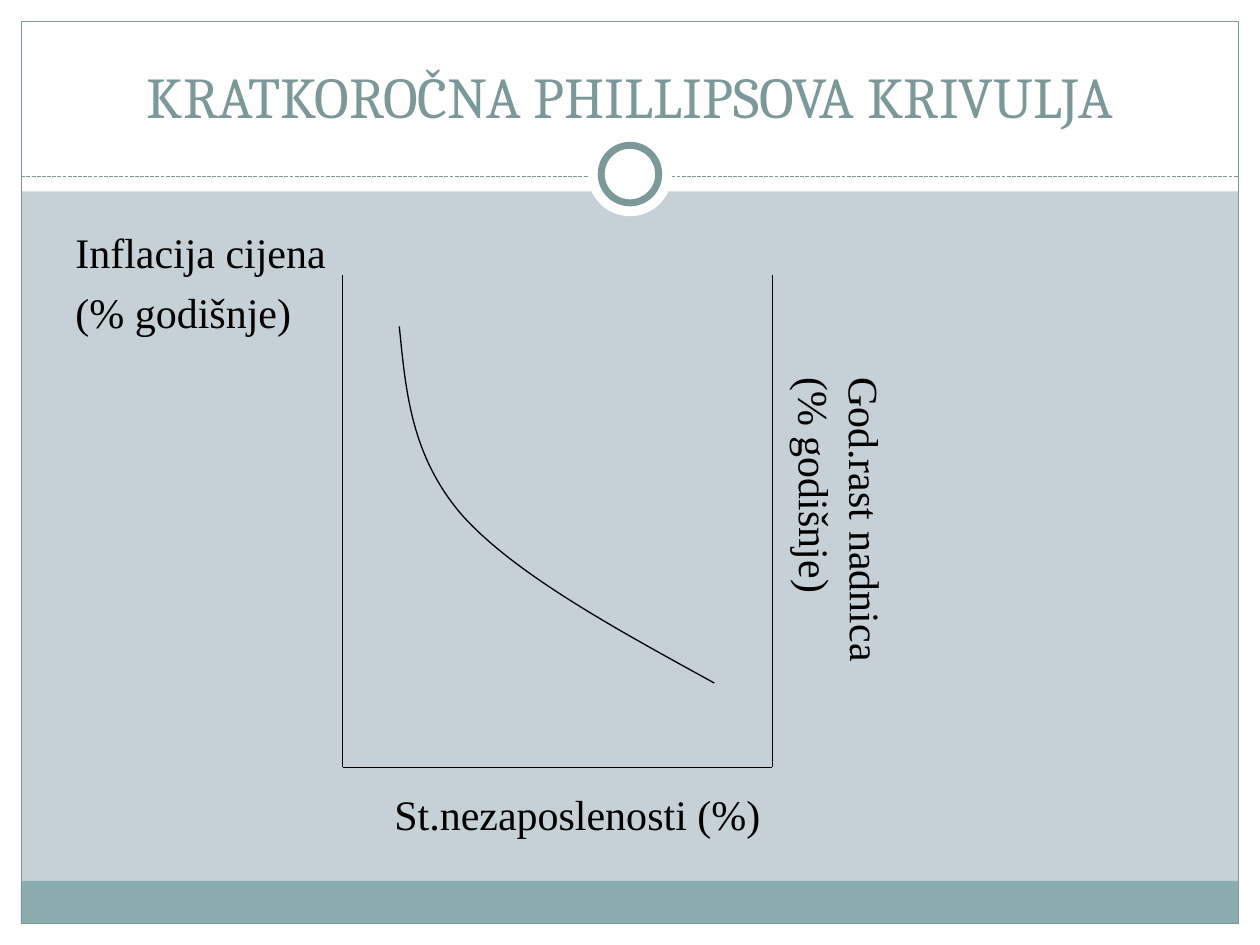
"""Build the slide on the short-run Phillips curve."""
import pptx
import pptx.dml.color
import pptx.enum.dml
import pptx.enum.shapes
import pptx.enum.text
import pptx.oxml
import pptx.oxml.ns
import pptx.util

Cm = pptx.util.Cm
Pt = pptx.util.Pt
RGBColor = pptx.dml.color.RGBColor
MSO_SHAPE = pptx.enum.shapes.MSO_SHAPE
PP_ALIGN = pptx.enum.text.PP_ALIGN
MSO_ANCHOR = pptx.enum.text.MSO_ANCHOR
MSO_AUTO_SIZE = pptx.enum.text.MSO_AUTO_SIZE

BLACK = RGBColor(0x00, 0x00, 0x00)
WHITE = RGBColor(0xFF, 0xFF, 0xFF)
GREY_BLUE = RGBColor(0xC5, 0xD1, 0xD7)
TEAL = RGBColor(0x7C, 0x99, 0x9A)
BAND = RGBColor(0x8C, 0xAD, 0xAE)

deck = pptx.Presentation()
deck.slide_width = Cm(25.4)
deck.slide_height = Cm(19.05)
page = deck.slides.add_slide(deck.slide_layouts[6])
page.background.fill.solid()
page.background.fill.fore_color.rgb = GREY_BLUE


def add_text(text, left, top, width, height, font="Times New Roman", size=24,
             color=BLACK, align=PP_ALIGN.LEFT, anchor=MSO_ANCHOR.TOP,
             before=0, rotation=0, wrap=False):
    box = page.shapes.add_textbox(Cm(left), Cm(top), Cm(width), Cm(height))
    box.rotation = rotation
    frame = box.text_frame
    frame.word_wrap = wrap
    frame.auto_size = MSO_AUTO_SIZE.NONE if wrap else MSO_AUTO_SIZE.SHAPE_TO_FIT_TEXT
    frame.vertical_anchor = anchor
    frame.text = text
    for para in frame.paragraphs:
        para.alignment = align
        para.space_before = Pt(before)
        for span in para.runs:
            span.font.name = font
            span.font.size = Pt(size)
            span.font.color.rgb = color


def add_line(x1, y1, x2, y2, color=BLACK):
    line = page.shapes.add_connector(
        pptx.enum.shapes.MSO_CONNECTOR.STRAIGHT, Cm(x1), Cm(y1), Cm(x2), Cm(y2))
    line.line.color.rgb = color
    line.line.width = Pt(0.75)
    line._element.spPr.append(pptx.oxml.parse_xml(
        f"<a:effectLst {pptx.oxml.ns.nsdecls('a')}/>"))
    return line


panels = [
    (MSO_SHAPE.RECTANGLE, 0, 18.62, 25.4, 0.43, WHITE, None, 0),
    (MSO_SHAPE.RECTANGLE, 0, 0, 25.4, 3.86, WHITE, None, 0),
    (MSO_SHAPE.RECTANGLE, 0, 0, 0.43, 19.05, WHITE, None, 0),
    (MSO_SHAPE.RECTANGLE, 24.97, 0, 0.43, 19.05, WHITE, None, 0),
    (MSO_SHAPE.RECTANGLE, 0.42, 17.76, 24.54, 0.86, BAND, None, 0),
    (MSO_SHAPE.RECTANGLE, 0.43, 0.43, 24.54, 18.19, None, TEAL, 0.75),
    (MSO_SHAPE.OVAL, 11.85, 2.66, 1.7, 1.7, WHITE, None, 0),
    (MSO_SHAPE.OVAL, 12.12, 2.93, 1.16, 1.16, WHITE, TEAL, 4),
]
for kind, left, top, width, height, fill, outline, weight in panels:
    if kind == MSO_SHAPE.OVAL and outline is None:
        divider = add_line(0.43, 3.56, 24.97, 3.56, TEAL)
        divider.line.dash_style = pptx.enum.dml.MSO_LINE.SQUARE_DOT
    panel = page.shapes.add_shape(kind, Cm(left), Cm(top), Cm(width), Cm(height))
    panel.shadow.inherit = False
    if fill is None:
        panel.fill.background()
    else:
        panel.fill.solid()
        panel.fill.fore_color.rgb = fill
    if outline is None:
        panel.line.fill.background()
    else:
        panel.line.color.rgb = outline
        panel.line.width = Pt(weight)

add_text("KRATKOROČNA PHILLIPSOVA KRIVULJA", 0.85, 0.64, 23.7, 2.1,
         font="Cambria", size=33, color=TEAL, align=PP_ALIGN.CENTER,
         anchor=MSO_ANCHOR.BOTTOM, wrap=True)
add_text("Inflacija cijena\n(% godišnje)", 1.27, 4.45, 5.61, 2.51, before=5.5)
add_text("St.nezaposlenosti (%)", 7.7, 15.77, 7.95, 1.27)
add_text("God.rast nadnica\n(% godišnje)", 13.79, 9.35, 6.3, 2.31, rotation=89.7)

axis_left, axis_right, axis_top, axis_bottom = 6.91, 15.57, 5.54, 15.47
for axis in (axis_left, axis_right):
    add_line(axis, axis_top, axis, axis_bottom)
add_line(axis_left, axis_bottom, axis_right, axis_bottom)

curve_points = [(8.05, 6.58), (8.18, 7.87), (8.28, 9.19), (9.32, 10.39),
                (10.39, 11.58), (12.4, 12.67), (14.4, 13.77)]
start, *controls = [(Cm(x), Cm(y)) for x, y in curve_points]
builder = page.shapes.build_freeform(*start)
builder.add_line_segments(controls, close=False)
curve = builder.convert_to_shape()
curve.shadow.inherit = False
curve.fill.background()
curve.line.color.rgb = BLACK
curve.line.width = Pt(0.75)

steps = list(curve._element.iter(pptx.oxml.ns.qn("a:lnTo")))
outline_path = steps[0].getparent()
for first in range(0, len(steps), 3):
    bezier = pptx.oxml.parse_xml(f"<a:cubicBezTo {pptx.oxml.ns.nsdecls('a')}/>")
    for step in steps[first:first + 3]:
        bezier.append(step[0])
        outline_path.remove(step)
    outline_path.append(bezier)

deck.save("out.pptx")
